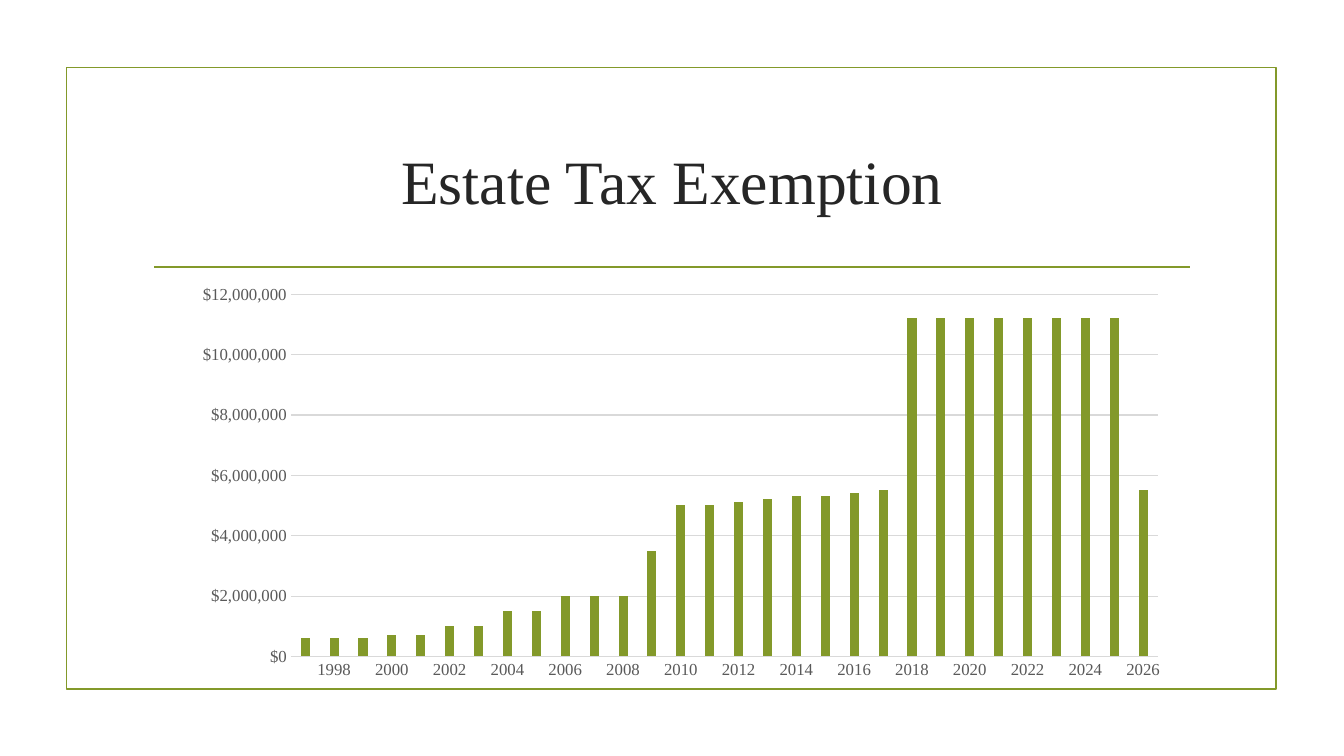
"""Build the slide charting the estate tax exemption by year."""
from typing import NamedTuple

from lxml import etree
from pptx import Presentation
from pptx import util as u
from pptx.chart import data as chart_data
from pptx.dml.color import RGBColor
from pptx.enum import chart as chart_enum, shapes, text
from pptx.oxml import ns

OLIVE = RGBColor(0x83, 0x99, 0x2A)
INK = RGBColor(0x26, 0x26, 0x26)
LABEL_GRAY = RGBColor(0x59, 0x59, 0x59)
GRID_GRAY = RGBColor(0xD9, 0xD9, 0xD9)
SERIF = "Times New Roman"


class Box(NamedTuple):
    """Left, top, width and height in centimetres."""
    left: float
    top: float
    width: float
    height: float

    def lengths(self) -> list[u.Cm]:
        """Return the four measures as lengths."""
        return [u.Cm(measure) for measure in self]


class Period(NamedTuple):
    """A run of years that share one exemption."""
    years: int
    exemption: int


FRAME = Box(1.68, 1.7, 30.48, 15.67)
HEADING = Box(3.61, 2.72, 26.67, 3.63)
EXEMPTION_CHART = Box(4.95, 6.83, 24.77, 10.49)
PLOT_AREA = {"x": 0.096, "y": 0.056, "w": 0.882, "h": 0.87}
FIRST_YEAR = 1997
PERIODS = [
    Period(3, 600_000), Period(2, 700_000), Period(2, 1_000_000),
    Period(2, 1_500_000), Period(3, 2_000_000), Period(1, 3_500_000),
    Period(2, 5_000_000), Period(1, 5_100_000), Period(1, 5_200_000),
    Period(2, 5_300_000), Period(1, 5_400_000), Period(1, 5_500_000),
    Period(8, 11_200_000), Period(1, 5_500_000),
]


def style_line(line, color: RGBColor, width: float) -> None:
    """Give a line its colour and its width in points."""
    line.color.rgb = color
    line.width = u.Pt(width)


def style_font(font, size: float, color: RGBColor) -> None:
    """Set the serif face, size and colour of a font."""
    font.name = SERIF
    font.size = u.Pt(size)
    font.color.rgb = color


def style_axis(axis) -> None:
    """Remove tick marks from an axis and style its labels."""
    axis.major_tick_mark = chart_enum.XL_TICK_MARK.NONE
    axis.minor_tick_mark = chart_enum.XL_TICK_MARK.NONE
    style_font(axis.tick_labels.font, 12, LABEL_GRAY)


def set_plot_area(chart) -> None:
    """Fix the inner plot area as fractions of the chart."""
    plot_area = chart._chartSpace.chart.plotArea
    for old_layout in plot_area.findall(ns.qn("c:layout")):
        plot_area.remove(old_layout)
    layout = etree.Element(ns.qn("c:layout"))
    manual = etree.SubElement(layout, ns.qn("c:manualLayout"))
    settings = {"layoutTarget": "inner", "xMode": "edge", "yMode": "edge", **PLOT_AREA}
    for tag, value in settings.items():
        etree.SubElement(manual, ns.qn(f"c:{tag}")).set("val", str(value))
    plot_area.insert(0, layout)


def add_frame(slide) -> None:
    """Draw the border and the rule under the title."""
    border = slide.shapes.add_shape(shapes.MSO_SHAPE.RECTANGLE, *FRAME.lengths())
    border.shadow.inherit = False
    border.fill.background()
    style_line(border.line, OLIVE, 1.25)
    title_rule = slide.shapes.add_connector(
        shapes.MSO_CONNECTOR.STRAIGHT, u.Cm(3.89), u.Cm(6.73), u.Cm(30), u.Cm(6.73))
    style_line(title_rule.line, OLIVE, 1.25)
    etree.SubElement(title_rule._element.spPr, ns.qn("a:effectLst"))


def add_heading(slide) -> None:
    """Write the slide title."""
    frame = slide.shapes.add_textbox(*HEADING.lengths()).text_frame
    frame.word_wrap = True
    frame.vertical_anchor = text.MSO_ANCHOR.MIDDLE
    frame.text = "Estate Tax Exemption"
    heading = frame.paragraphs[0]
    heading.alignment = text.PP_ALIGN.CENTER
    style_font(heading.runs[0].font, 44, INK)


def add_exemption_chart(slide) -> None:
    """Draw the yearly exemptions as columns."""
    exemptions = [period.exemption for period in PERIODS for _ in range(period.years)]
    years = range(FIRST_YEAR, FIRST_YEAR + len(exemptions))
    table = chart_data.CategoryChartData()
    table.categories = [str(year) if year % 2 == 0 else "" for year in years]
    table.add_series("Series 1", exemptions)
    chart = slide.shapes.add_chart(
        chart_enum.XL_CHART_TYPE.COLUMN_CLUSTERED, *EXEMPTION_CHART.lengths(), table).chart
    chart.has_legend = False
    chart.has_title = False
    style_font(chart.font, 10, RGBColor(0, 0, 0))
    set_plot_area(chart)

    columns = chart.plots[0]
    columns.vary_by_categories = False
    columns.gap_width = 219
    columns.overlap = -27
    fill = columns.series[0].format.fill
    fill.solid()
    fill.fore_color.rgb = OLIVE

    year_axis, dollar_axis = chart.category_axis, chart.value_axis
    style_axis(year_axis)
    style_line(year_axis.format.line, GRID_GRAY, 0.75)
    style_axis(dollar_axis)
    dollar_axis.format.line.fill.background()
    dollar_axis.minimum_scale = 0
    dollar_axis.maximum_scale = 12_000_000
    dollar_axis.major_unit = 2_000_000
    dollar_axis.tick_labels.number_format = '"$"#,##0'
    dollar_axis.tick_labels.number_format_is_linked = False
    style_line(dollar_axis.major_gridlines.format.line, GRID_GRAY, 0.75)


def main() -> None:
    """Build and save the presentation."""
    deck = Presentation()
    deck.slide_width, deck.slide_height = u.Cm(33.87), u.Cm(19.05)
    slide = deck.slides.add_slide(deck.slide_layouts[6])
    add_frame(slide)
    add_heading(slide)
    add_exemption_chart(slide)
    deck.save("out.pptx")


if __name__ == "__main__":
    main()
